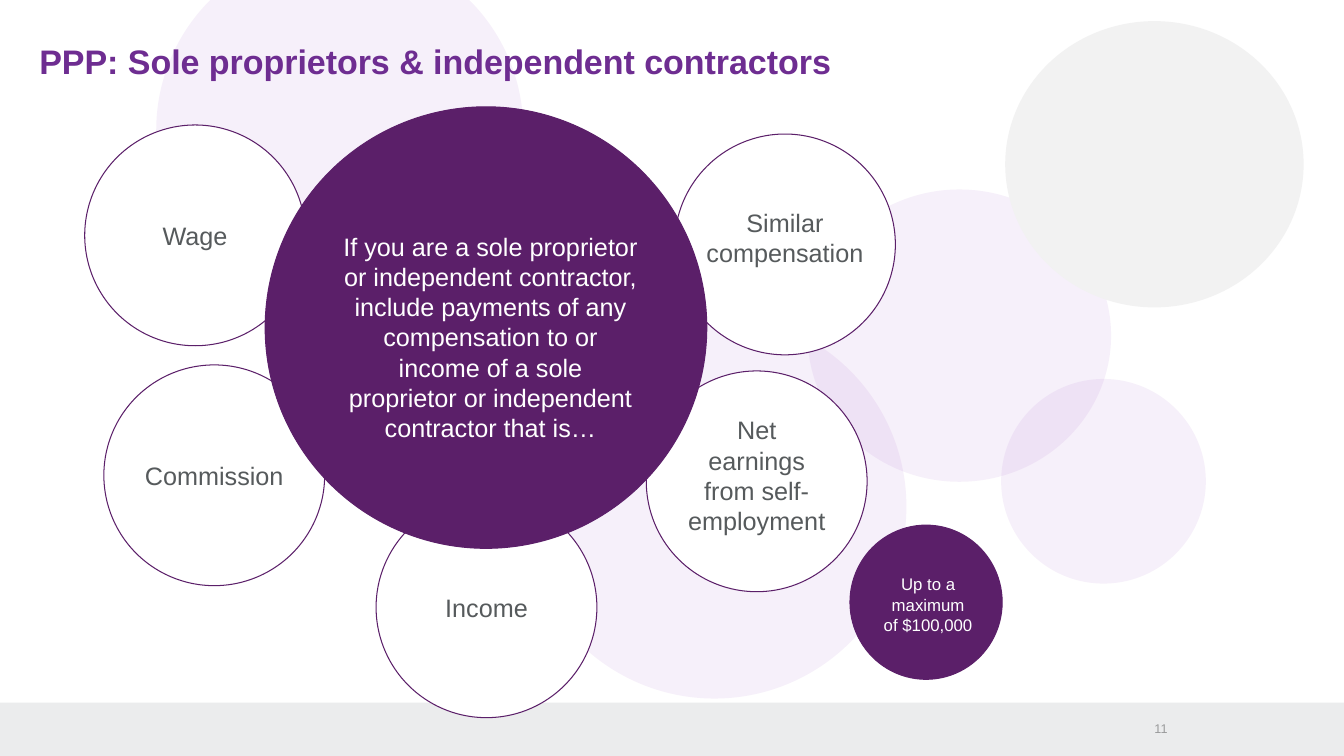
from dataclasses import dataclass

from lxml.etree import SubElement
from pptx import Presentation
from pptx.dml.color import RGBColor
from pptx.enum.shapes import MSO_SHAPE
from pptx.enum.text import MSO_ANCHOR, PP_ALIGN
from pptx.oxml.ns import qn
from pptx.util import Inches, Pt


@dataclass(frozen=True)
class Theme:
    font: str = "Arial"
    heading: str = "6E2D91"
    plum: str = "5B1F69"
    lilac: str = "AE6CD2"
    body: str = "565A5C"
    number: str = "9A9B9C"
    footer: str = "EBECED"
    pale_gray: str = "F2F2F2"
    white: str = "FFFFFF"
    title_size: float = 24.3
    body_size: float = 18
    small_size: float = 12
    number_size: float = 9
    outline: float = 0.75


class SlideBuilder:
    def __init__(self, slide, theme):
        self.slide = slide
        self.theme = theme

    def shape(self, kind, box, fill, outline=None, opacity=None):
        """Draw a preset shape; opacity is a percentage."""
        shape = self.slide.shapes.add_shape(kind, *map(Inches, box))
        shape.shadow.inherit = False
        shape.fill.solid()
        shape.fill.fore_color.rgb = RGBColor.from_string(fill)
        if opacity is not None:
            color = shape.fill._xPr.find(qn("a:solidFill"))[0]
            SubElement(color, qn("a:alpha"), val=str(opacity * 1000))
        if outline:
            shape.line.color.rgb = RGBColor.from_string(outline)
            shape.line.width = Pt(self.theme.outline)
        else:
            shape.line.fill.background()

    def circle(self, box, fill, outline=None, opacity=None):
        self.shape(MSO_SHAPE.OVAL, box, fill, outline, opacity)

    def text(self, box, words, size, color, align=PP_ALIGN.CENTER,
             anchor=MSO_ANCHOR.MIDDLE, bold=False, inset=True):
        frame = self.slide.shapes.add_textbox(*map(Inches, box)).text_frame
        frame.word_wrap = True
        frame.vertical_anchor = anchor
        if not inset:
            frame.margin_left = frame.margin_right = 0
            frame.margin_top = frame.margin_bottom = 0
        frame.text = words
        paragraph = frame.paragraphs[0]
        paragraph.alignment = align
        font = paragraph.runs[0].font
        font.name = self.theme.font
        font.size = Pt(size)
        font.bold = bold
        font.color.rgb = RGBColor.from_string(color)

    def bubble(self, left, top, words, label_width, label_height, lift):
        """Draw a white circle with a label raised by lift above its centre."""
        diameter = 2.19
        self.circle((left, top, diameter, diameter),
                    self.theme.white, self.theme.plum)
        label = (left + (diameter - label_width) / 2,
                 top + (diameter - label_height) / 2 - lift,
                 label_width, label_height)
        self.text(label, words, self.theme.body_size, self.theme.body)


BACKDROP_CIRCLES = [
    (1.55, -0.53, 3.64, 3.64),
    (5.18, 3.12, 3.81, 3.81),
    (8.01, 1.88, 3.01, 2.9),
    (9.93, 3.76, 2.03, 2.03),
]

COMPENSATION_TYPES = [
    (0.84, 1.24, "Wage", 1.58, 0.4, 0),
    (1.03, 3.62, "Commission", 1.58, 0.4, 0),
    (3.73, 4.93, "Income", 1.58, 0.4, 0),
    (6.41, 3.68, "Net earnings from self-employment", 1.58, 1.31, 0.06),
    (6.69, 1.33, "Similar compensation", 1.95, 0.71, 0.07),
]


def main():
    presentation = Presentation()
    presentation.slide_width = Inches(13.33)
    presentation.slide_height = Inches(7.5)
    theme = Theme()
    builder = SlideBuilder(
        presentation.slides.add_slide(presentation.slide_layouts[6]), theme)

    builder.shape(MSO_SHAPE.RECTANGLE, (0, 6.97, 13.33, 0.53), theme.footer)
    for box in BACKDROP_CIRCLES:
        builder.circle(box, theme.lilac, opacity=10)
    builder.circle((9.97, 0.21, 2.96, 2.84), theme.pale_gray)

    builder.text((0.39, 0.4, 12.53, 0.43),
                 "PPP: Sole proprietors & independent contractors",
                 theme.title_size, theme.heading, align=PP_ALIGN.LEFT,
                 anchor=MSO_ANCHOR.TOP, bold=True, inset=False)
    builder.text((11.42, 7.15, 0.16, 0.16), "11", theme.number_size,
                 theme.number, align=PP_ALIGN.RIGHT, inset=False)

    for compensation in COMPENSATION_TYPES:
        builder.bubble(*compensation)

    builder.circle((2.63, 1.06, 4.38, 4.38), theme.plum, theme.plum)
    builder.text((3.3, 2.23, 3.13, 2.22),
                 "If you are a sole proprietor or independent contractor, "
                 "include payments of any compensation to or income of a sole "
                 "proprietor or independent contractor that is…",
                 theme.body_size, theme.white)

    builder.circle((8.43, 5.21, 1.51, 1.53), theme.plum, theme.plum)
    builder.text((8.66, 5.64, 1.09, 0.71), "Up to a maximum of $100,000",
                 theme.small_size, theme.white)

    presentation.save("out.pptx")


if __name__ == "__main__":
    main()
